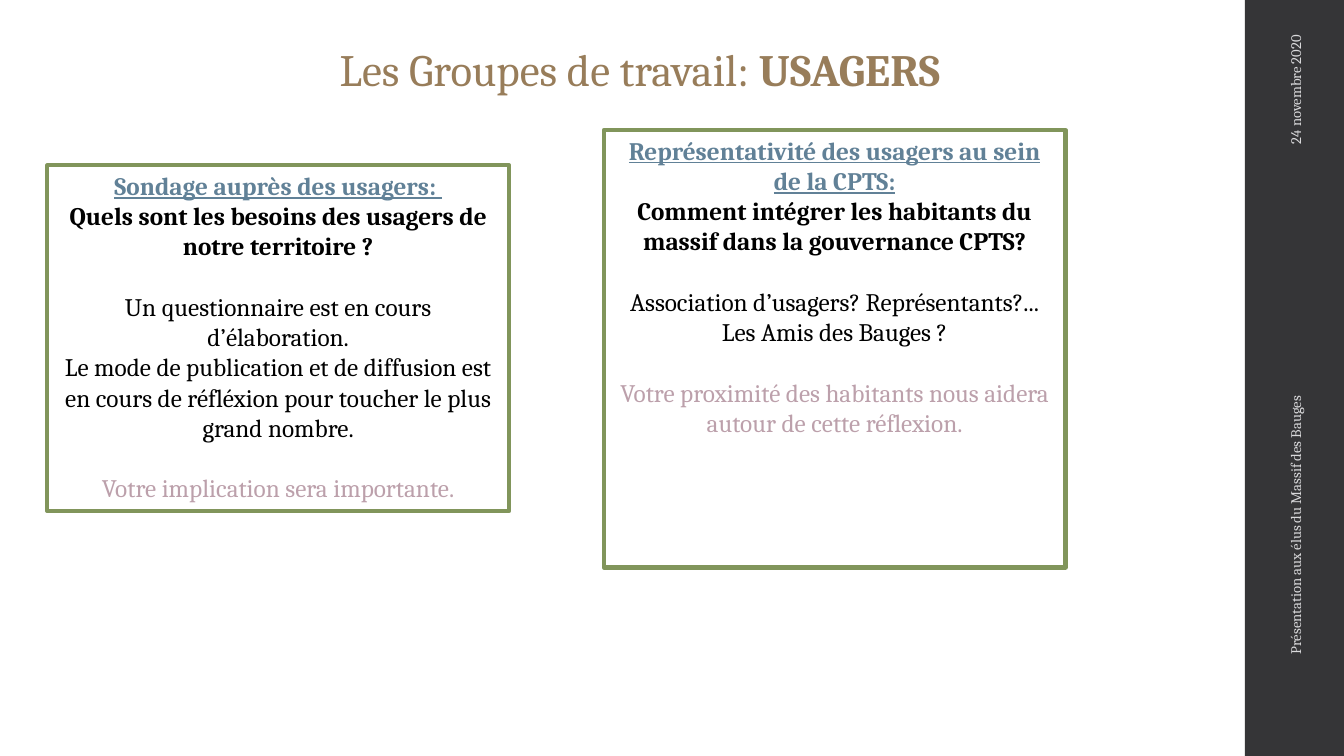
from pptx import Presentation
from pptx.dml.color import RGBColor
from pptx.enum.shapes import MSO_SHAPE
from pptx.enum.text import MSO_ANCHOR, MSO_AUTO_SIZE, PP_ALIGN
from pptx.util import Pt

RECT = MSO_SHAPE.RECTANGLE
TOP, MIDDLE = MSO_ANCHOR.TOP, MSO_ANCHOR.MIDDLE
LEFT, CENTER, RIGHT = PP_ALIGN.LEFT, PP_ALIGN.CENTER, PP_ALIGN.RIGHT
FIXED = MSO_AUTO_SIZE.NONE

DARK = RGBColor(0x35, 0x35, 0x37)
PALE = RGBColor(0xD9, 0xD9, 0xDB)
BROWN = RGBColor(0x98, 0x7D, 0x5A)
GREEN = RGBColor(0x81, 0x95, 0x5B)
BLUE = RGBColor(0x61, 0x81, 0x97)
BLACK = RGBColor(0, 0, 0)
ROSE = RGBColor(0xBC, 0xA0, 0xAB)
FACE = "Cambria"
GAP = 21.6  # one line of 18 pt text

# Content
TITLE = [("Les Groupes de travail: ", False), ("USAGERS", True)]
SIDE = [  # text, alignment, frame before rotation
    ("24 novembre 2020", RIGHT, (850.3, 78.5, 149.8, 28.8)),
    ("Présentation aux élus du Massif des Bauges", LEFT,
     (784.1, 319, 282.2, 28.8)),
]
CARDS = [  # frame, then lines of (style, space before, text)
    ((33.8, 118.1, 329.8, 247), [
        ("head", 0, "Sondage auprès des usagers: "),
        ("ask", 0, "Quels sont les besoins des usagers de notre territoire ?"),
        ("body", GAP, "Un questionnaire est en cours d’élaboration."),
        ("body", 0, "Le mode de publication et de diffusion est en cours de "
                    "réfléxion pour toucher le plus grand nombre."),
        ("call", GAP, "Votre implication sera importante."),
    ]),
    ((431.3, 92.9, 329.8, 312.5), [
        ("head", 0, "Représentativité des usagers au sein de la CPTS:"),
        ("ask", 0, "Comment intégrer les habitants du massif dans la "
                   "gouvernance CPTS?"),
        ("body", GAP, "Association d’usagers? Représentants?..."),
        ("body", 0, "Les Amis des Bauges ?"),
        ("call", GAP, "Votre proximité des habitants nous aidera autour de "
                      "cette réflexion."),
    ]),
]
STYLES = {  # colour and font settings
    "head": (BLUE, {"bold": True, "underline": True}),
    "ask": (BLACK, {"bold": True}),
    "body": (BLACK, {"bold": False}),
    "call": (ROSE, {"bold": False}),
}


def add_run(para, text, size, color, **form):
    run = para.add_run()
    run.text = text
    for key, val in {"name": FACE, "size": Pt(size), **form}.items():
        setattr(run.font, key, val)
    run.font.color.rgb = color


def set_frame(shape, anchor):
    form = {"word_wrap": True, "auto_size": FIXED, "vertical_anchor": anchor,
            "margin_left": Pt(7.2), "margin_right": Pt(7.2),
            "margin_top": Pt(3.6), "margin_bottom": Pt(3.6)}
    for key, val in form.items():
        setattr(shape.text_frame, key, val)
    return shape.text_frame


def points(*box):
    return [Pt(val) for val in box]


prs = Presentation()
prs.slide_width, prs.slide_height = Pt(960), Pt(540)
slide = prs.slides.add_slide(prs.slide_layouts[5])
shapes = slide.shapes

# Side band
band = shapes.add_shape(RECT, *points(889.2, 0, 70.8, 540))
band.shadow.inherit = False
band.fill.solid()
band.fill.fore_color.rgb = DARK
band.line.fill.background()
for text, align, box in SIDE:
    label = shapes.add_textbox(*points(*box))
    label.rotation = 270
    para = set_frame(label, MIDDLE).paragraphs[0]
    para.alignment = align
    add_run(para, text, 10.5, PALE)

# Title
title = shapes.title
title.left, title.top, title.width, title.height = points(33.8, 26, 846.7, 46)
para = set_frame(title, TOP).paragraphs[0]
para.alignment = CENTER
for text, bold in TITLE:
    add_run(para, text, 32, BROWN, bold=bold)

# Framed cards
for box, lines in CARDS:
    card = shapes.add_shape(RECT, *points(*box))
    card.shadow.inherit = False
    card.fill.background()
    card.line.color.rgb = GREEN
    card.line.width = Pt(3)
    frame = set_frame(card, TOP)
    for num, (style, space, text) in enumerate(lines):
        para = frame.add_paragraph() if num else frame.paragraphs[0]
        para.alignment = CENTER
        if space:
            para.space_before = Pt(space)
        color, form = STYLES[style]
        add_run(para, text, 18, color, **form)

prs.save("out.pptx")
